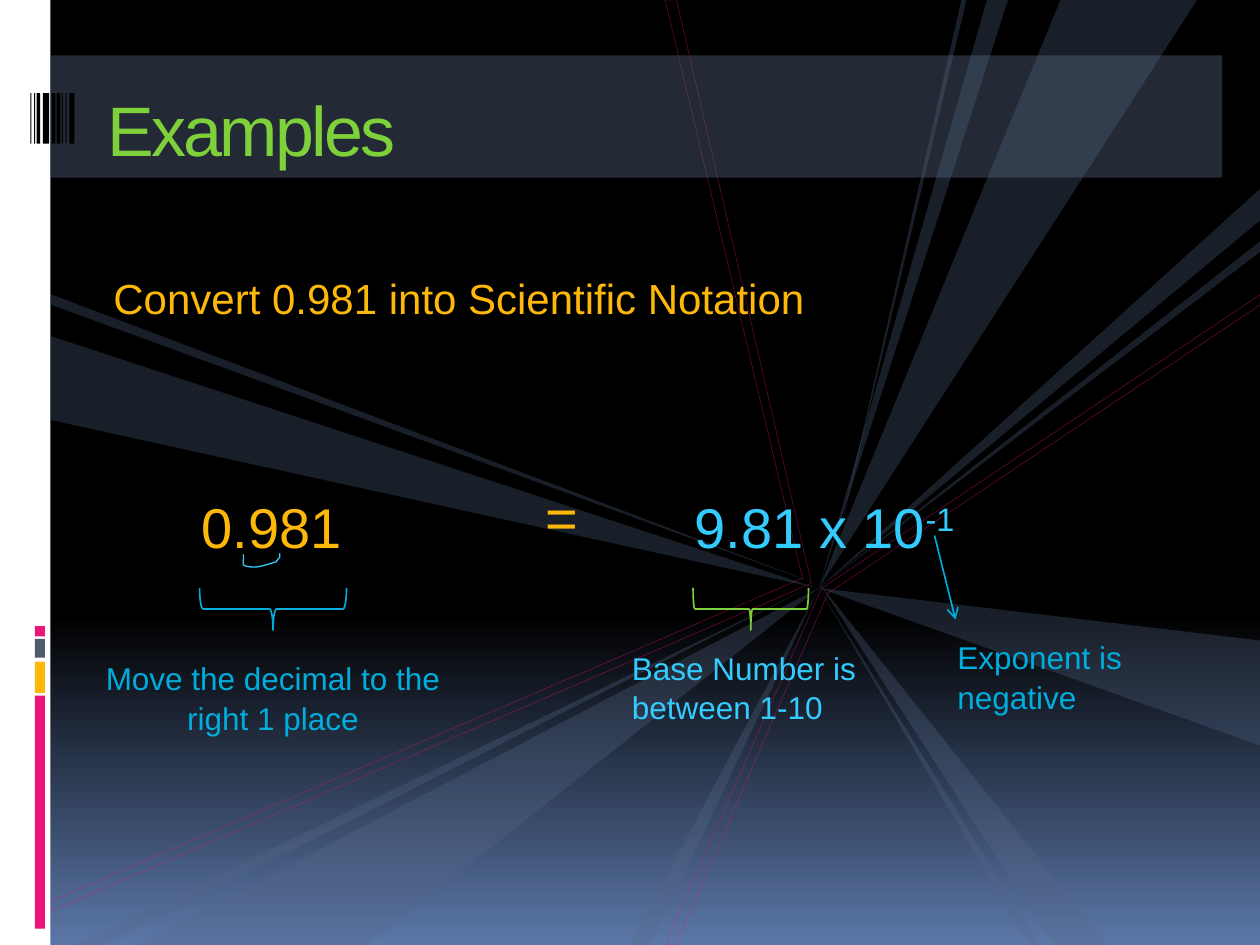
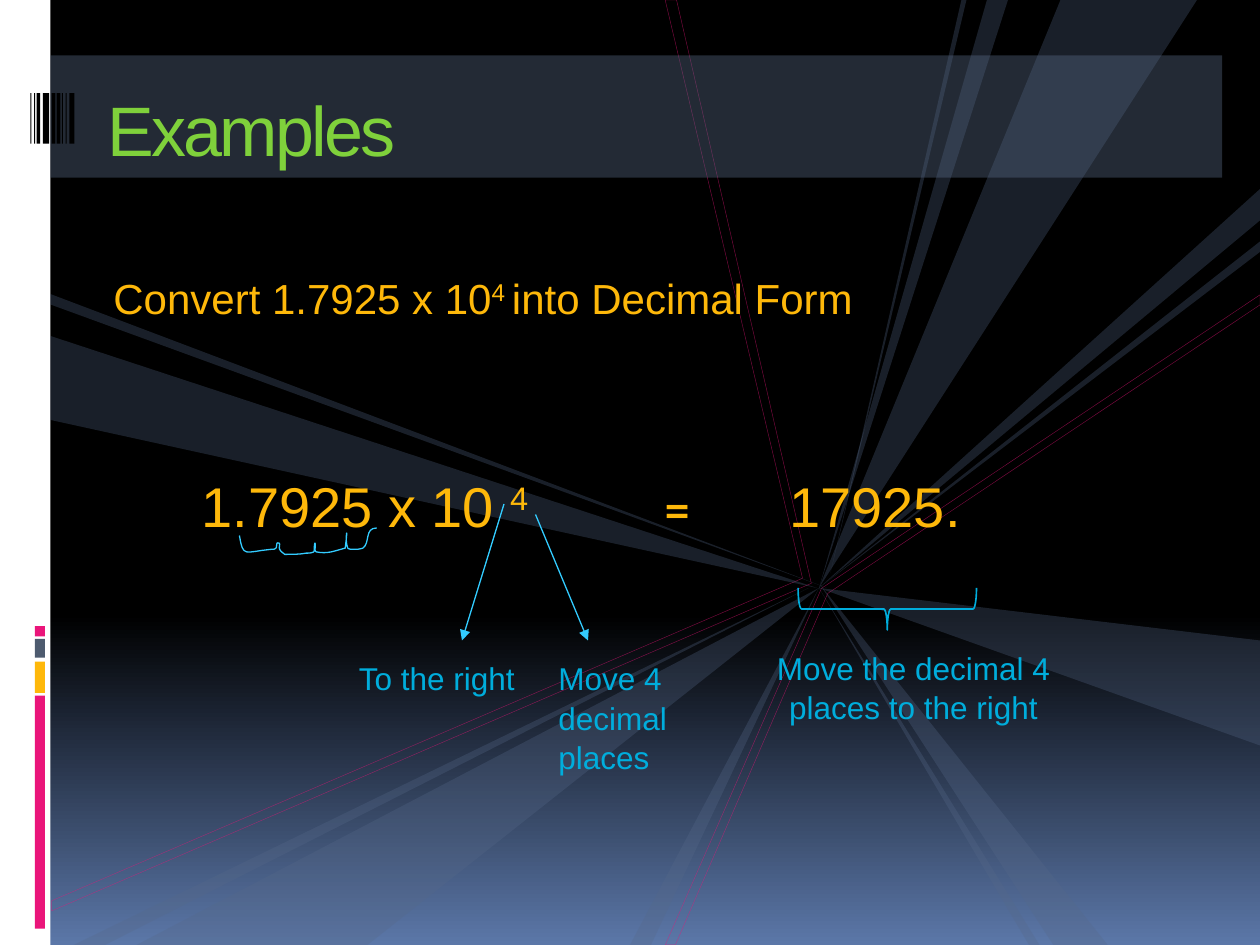
from lxml.etree import SubElement
from pptx import Presentation
from pptx.dml.color import RGBColor
from pptx.enum.shapes import MSO_CONNECTOR as CONN, MSO_SHAPE as SHAPE
from pptx.enum.text import MSO_ANCHOR as ANCHOR, PP_ALIGN as ALIGN
from pptx.oxml.ns import qn
from pptx.util import Inches, Pt

COLS, ROWS = 120, 90
BLACK, WHITE, PINK, SLATE = "000000", "FFFFFF", "EA157A", "4E5B6F"
GOLD, GREEN, BLUE, SKY = "FEB80A", "7FD13B", "00ADDC", "33CCFF"
RAY, BAND, GLOW = "566989", "586A86", "5B77A8"
BIG, BODY, LABEL = 32, 24, 18

# Left edge bars (top, height, colour) and barcode stripes (left, width)
EDGE_BARS = [(66.24, 22.2, PINK), (63, 3, GOLD), (60.84, 1.8, SLATE), (59.64, 0.96, PINK)]
STRIPES = [(2.88, 0.12), (3.24, 0.12), (3.48, 0.36), (4.08, 0.6), (4.92, 0.36),
           (5.4, 0.36), (5.88, 0.12), (6.24, 0.12), (6.6, 0.48)]

# Outlined beams, and filled rays that meet at the hub
BEAMS = [
    [(63.36, 90), (78.24, 56.04), (120, 28.08), (120, 29.04), (78.84, 56.52), (64.32, 90)],
    [(4.92, 85.8), (4.92, 86.76), (77.28, 55.56), (64.44, 0), (63.36, 0), (76.44, 55.08)],
]
HUB = (78, 56)
RAYS = [
    [(92.04, 0), (79.08, 54.6), (91.56, 0)],
    [(101, 0), (114, 0), HUB],
    [HUB, (120, 61), (120, 71)],
    [(96, 0), HUB, (94, 0)],
    [(100.32, 90), (105.5, 90), (78.12, 55.7)],
    [(99, 90), HUB, (98, 90)],
    [(120, 18), (120, 21), HUB],
    [(120, 23), HUB, (120, 24)],
    [(13, 90), HUB, (35, 90)],
    [(7, 90), (77, 56), (10, 90)],
    [(4.8, 32), (77.8, 56), (4.8, 40)],
    [(4.8, 28), (78.8, 56), (4.8, 29)],
    [(60, 90), (62, 90), HUB],
]

# Hand-drawn hops of the decimal point: a start, then cubic curves
ONE_HOP = (23.16, 52.8), [
    (23.28, 53.16, 23.04, 53.76, 23.28, 53.88),
    (24.48, 54.24, 25.32, 53.76, 26.28, 53.52),
    (26.76, 52.92, 26.64, 53.16, 26.64, 52.68),
]
FOUR_HOPS = (22.8, 51), [
    (23.16, 53.16, 23.28, 52.56, 25.8, 52.32),
    (26.04, 52.32, 26.16, 52.32, 26.28, 52.2),
    (26.4, 52.08, 26.28, 51.6, 26.52, 51.72),
    (26.76, 51.72, 26.52, 52.08, 26.64, 52.32),
    (26.76, 52.56, 27, 52.68, 27.12, 52.8),
    (27.84, 52.8, 28.56, 52.8, 29.16, 52.68),
    (29.4, 52.68, 29.64, 52.68, 29.88, 52.56),
    (30, 52.32, 29.88, 51.96, 30, 51.72),
    (30.12, 51.96, 29.88, 52.44, 30.12, 52.56),
    (31.2, 52.8, 31.92, 52.44, 32.88, 52.2),
    (33.24, 49.44, 32.76, 51.36, 33.12, 52.2),
    (33.24, 52.32, 33.48, 52.32, 33.72, 52.32),
    (33.96, 52.32, 34.2, 52.32, 34.56, 52.2),
    (35.28, 51.72, 34.68, 50.28, 35.88, 50.28),
]


def rgb(color):
    return RGBColor.from_string(color)


def bezier(start, curves, steps=8):
    """Points along a chain of cubic curves."""
    points = [start]
    for x1, y1, x2, y2, x3, y3 in curves:
        x0, y0 = points[-1]
        for i in range(1, steps + 1):
            t = i / steps
            u = 1 - t
            a, b, c, d = u ** 3, 3 * u * u * t, 3 * u * t * t, t ** 3
            points.append((a * x0 + b * x1 + c * x2 + d * x3,
                           a * y0 + b * y1 + c * y2 + d * y3))
    return points


class Deck:
    def __init__(self):
        self.prs = Presentation()
        self.prs.slide_width, self.prs.slide_height = Inches(10), Inches(7.5)
        self.s = None
        fill = self.prs.slide_master.background.fill
        fill.gradient()
        fill.gradient_angle = 270
        for stop, position, color in zip(fill.gradient_stops, (0.65, 1), (BLACK, GLOW)):
            stop.position, stop.color.rgb = position, rgb(color)

    def grid(self, x, y):
        return (round(self.prs.slide_width * x / COLS),
                round(self.prs.slide_height * y / ROWS))

    def box(self, x, y, w, h):
        return *self.grid(x, y), *self.grid(w, h)

    def paint(self, sp, fill=None, line=None, width=0.75, alpha=None):
        sp.shadow.inherit = False
        if fill:
            sp.fill.solid()
            sp.fill.fore_color.rgb = rgb(fill)
        else:
            sp.fill.background()
        if line:
            sp.line.color.rgb = rgb(line)
            sp.line.width = Pt(width)
        else:
            sp.line.fill.background()
        if alpha:
            for color in sp.element.iter(qn("a:srgbClr")):
                SubElement(color, qn("a:alpha"), val=str(alpha * 1000))

    def rect(self, x, y, w, h, fill, alpha=None):
        sp = self.s.shapes.add_shape(SHAPE.RECTANGLE, *self.box(x, y, w, h))
        self.paint(sp, fill, alpha=alpha)

    def outline(self, points, close=True, **style):
        points = [self.grid(*point) for point in points]
        builder = self.s.shapes.build_freeform(*points[0])
        builder.add_line_segments(points[1:], close=close)
        self.paint(builder.convert_to_shape(), **style)

    def brace(self, x, y, w, h, color, curl=0.083):
        """A brace that opens upward and fills the given box."""
        sp = self.s.shapes.add_shape(
            SHAPE.RIGHT_BRACE, *self.box(x + (w - h) / 2, y + (h - w) / 2, h, w))
        sp.rotation = 90
        sp.adjustments[0], sp.adjustments[1] = curl, 0.5
        self.paint(sp, line=color, width=0.94)

    def arrow(self, start, end, color, head="triangle", width=0.75):
        line = self.s.shapes.add_connector(
            CONN.STRAIGHT, *self.grid(*start), *self.grid(*end))
        line.line.color.rgb = rgb(color)
        line.line.width = Pt(width)
        SubElement(line.line._get_or_add_ln(), qn("a:tailEnd"), type=head)
        SubElement(line.element.spPr, qn("a:effectLst"))

    def text(self, x, y, w, h, text, size, color, align=ALIGN.LEFT, font="Arial", left=0.1):
        """Text between a pair of ^ marks is raised."""
        tf = self.s.shapes.add_textbox(*self.box(x, y, w, h)).text_frame
        tf.word_wrap = True
        tf.margin_left = Inches(left)
        p = tf.paragraphs[0]
        p.alignment, p.line_spacing = align, 1.05
        for i, part in enumerate(text.split("^")):
            r = p.add_run()
            r.text = part
            self.style(r, size, color, font)
            if i % 2:
                r._r.get_or_add_rPr().set("baseline", "30000")

    def style(self, r, size, color, font="Arial"):
        r.font.size, r.font.name, r.font.color.rgb = Pt(size), font, rgb(color)

    def value(self, x, y, w, text, color=GOLD, **kw):
        self.text(x, y, w, 7.6, text, BIG, color, **kw)

    def label(self, x, y, w, text, color=BLUE, lines=2, **kw):
        self.text(x, y, w, 1.2 + 3.6 * lines, text, LABEL, color, **kw)

    def backdrop(self):
        self.rect(0, 0, 4.8, ROWS, WHITE)
        for y, h, color in EDGE_BARS:
            self.rect(3.33, y, 0.96, h, color)
        for points in BEAMS:
            self.outline(points, line=PINK, width=0.25, alpha=53)
        for points in RAYS:
            self.outline(points, fill=RAY, alpha=30)
        self.rect(4.8, 5.28, 111.6, 11.64, BAND, alpha=40)
        for x, w in STRIPES:
            self.rect(x, 8.88, w, 4.8, BLACK)

    def title(self, text):
        sp = self.s.shapes.title
        self.s.shapes.element.append(sp.element)  # bring above the band
        sp.left, sp.top, sp.width, sp.height = self.box(9, 7, 107, 10.2)
        tf = sp.text_frame
        tf.text = text
        tf.vertical_anchor = ANCHOR.MIDDLE
        tf.margin_top = Inches(0.07)
        p = tf.paragraphs[0]
        p.alignment = ALIGN.LEFT
        self.style(p.runs[0], 40, GREEN)
        p.runs[0]._r.get_or_add_rPr().set("spc", "-150")

    def slide(self, title, task):
        self.s = self.prs.slides.add_slide(self.prs.slide_layouts[5])
        self.backdrop()
        self.title(title)
        self.text(9, 25.1, 99.7, 12.8, task, BODY, GOLD, left=0.15)


def main():
    deck = Deck()

    # Decimal form to scientific notation
    deck.slide("Examples", "Convert 0.981 into Scientific Notation")
    deck.value(18, 46, 25, "0.981")
    deck.value(46, 45, 15, "=", align=ALIGN.CENTER)
    deck.value(65, 46, 43, "9.81 x 10^-1", SKY)
    deck.brace(66, 56, 11, 4, GREEN, curl=0.044)
    deck.label(59, 61, 28, "Base Number is between 1-10", SKY)
    deck.arrow((89, 51), (91, 59), BLUE, head="arrow", width=0.94)
    deck.label(90, 60, 21, "Exponent is negative")
    deck.brace(19, 56, 14, 4, BLUE)
    deck.label(8, 62, 36, "Move the decimal to the right 1 place", align=ALIGN.CENTER)
    deck.outline(bezier(*ONE_HOP), close=False, line=SKY)

    # Scientific notation to decimal form
    deck.slide("Examples", "Convert 1.7925 x 10^4 ^into Decimal Form")
    deck.value(18, 44, 43, "1.7925 x 10 ^4")
    deck.value(57, 44, 15, "=", align=ALIGN.CENTER, font="Cabin")
    deck.value(74, 44, 32, "17925.")
    deck.brace(76, 56, 17, 4, BLUE)
    deck.label(69, 61, 36, "Move the decimal 4 places to the right", align=ALIGN.CENTER)
    deck.label(33, 62, 18, "To the right", lines=1)
    deck.label(52, 62, 18, "Move 4 decimal places", lines=3)
    deck.arrow((48, 48), (44, 61), SKY)
    deck.arrow((51, 49), (56, 61), SKY)
    deck.outline(bezier(*FOUR_HOPS), close=False, line=SKY)

    deck.prs.save("out.pptx")


if __name__ == "__main__":
    main()
